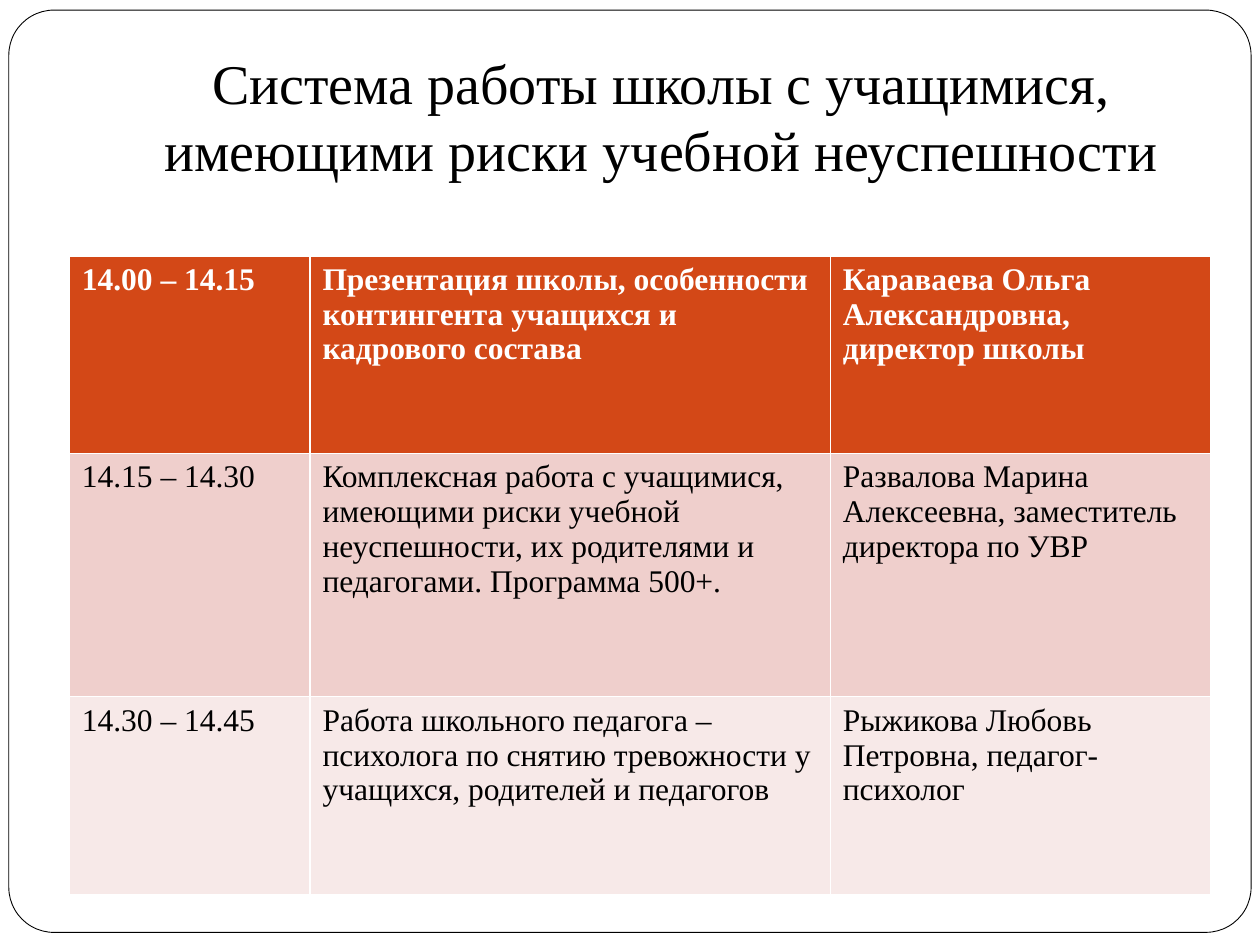
from dataclasses import dataclass

from pptx import Presentation
from pptx.dml.color import RGBColor
from pptx.enum.shapes import MSO_SHAPE
from pptx.enum.text import MSO_ANCHOR, MSO_AUTO_SIZE, PP_ALIGN
from pptx.util import Inches, Pt

ROUNDED = MSO_SHAPE.ROUNDED_RECTANGLE
BOTTOM = MSO_ANCHOR.BOTTOM
CENTER = PP_ALIGN.CENTER
NO_FIT = MSO_AUTO_SIZE.NONE
TITLE_ONLY = 5


@dataclass(frozen=True)
class Theme:
    """Colours, font and type sizes of the deck."""
    font: str = "Times New Roman"
    title_size: int = 32
    table_size: int = 18
    white: RGBColor = RGBColor.from_string("FFFFFF")
    black: RGBColor = RGBColor.from_string("000000")
    header: RGBColor = RGBColor.from_string("D34817")
    bands: tuple = (RGBColor.from_string("EFCFCC"), RGBColor.from_string("F7E9E8"))


THEME = Theme()
TITLE = "Система работы школы с учащимися, имеющими риски учебной неуспешности"
SCHEDULE = [
    ("14.00 – 14.15",
     "Презентация школы, особенности контингента учащихся и кадрового состава",
     "Караваева Ольга Александровна, директор школы"),
    ("14.15 – 14.30",
     "Комплексная работа с учащимися, имеющими риски учебной неуспешности, "
     "их родителями и педагогами. Программа 500+.",
     "Развалова Марина Алексеевна, заместитель директора по УВР"),
    ("14.30 – 14.45",
     "Работа школьного педагога – психолога по снятию тревожности у учащихся, "
     "родителей и педагогов",
     "Рыжикова Любовь Петровна, педагог-психолог"),
]
COLUMN_WIDTHS = (1.91, 4.13, 3.02)
ROW_HEIGHTS = (1.57, 1.93, 1.57)


def style_text(frame, size, color, bold=False):
    """Format every run of a text frame."""
    for para in frame.paragraphs:
        for span in para.runs:
            span.font.name = THEME.font
            span.font.size = Pt(size)
            span.font.bold = bold
            span.font.color.rgb = color


def add_frame(page, box):
    """Draw the rounded page frame behind everything else."""
    frame = page.shapes.add_shape(ROUNDED, *map(Inches, box))
    frame.adjustments[0] = 0.049
    frame.shadow.inherit = False
    frame.fill.solid()
    frame.fill.fore_color.rgb = THEME.white
    frame.line.color.rgb = THEME.black
    frame.line.width = Pt(0.5)
    page.shapes.title.element.addprevious(frame.element)


def place_title(page, box):
    """Move the title placeholder into its box and fill it."""
    title = page.shapes.title
    title.left, title.top, title.width, title.height = map(Inches, box)
    frame = title.text_frame
    frame.text = TITLE
    frame.word_wrap = True
    frame.auto_size = NO_FIT
    frame.vertical_anchor = BOTTOM
    frame.margin_left = frame.margin_right = frame.margin_bottom = Inches(0.1)
    frame.margin_top = Inches(0.05)
    frame.paragraphs[0].alignment = CENTER
    style_text(frame, THEME.title_size, THEME.black)


def add_schedule(page, box):
    """Add the schedule table with a header row and alternating bands."""
    table = page.shapes.add_table(
        len(SCHEDULE), len(COLUMN_WIDTHS), *map(Inches, box)).table
    for column, width in zip(table.columns, COLUMN_WIDTHS):
        column.width = Inches(width)
    for index, (row, texts) in enumerate(zip(table.rows, SCHEDULE)):
        row.height = Inches(ROW_HEIGHTS[index])
        is_header = index == 0
        fill = THEME.header if is_header else THEME.bands[(index - 1) % 2]
        color = THEME.white if is_header else THEME.black
        for cell, text in zip(row.cells, texts):
            cell.text_frame.text = text
            cell.fill.solid()
            cell.fill.fore_color.rgb = fill
            style_text(cell.text_frame, THEME.table_size, color, is_header)


def main():
    """Build and save the deck."""
    deck = Presentation()
    deck.slide_width, deck.slide_height = Inches(10), Inches(7.5)
    page = deck.slides.add_slide(deck.slide_layouts[TITLE_ONLY])
    add_frame(page, (0.07, 0.08, 9.86, 7.32))
    place_title(page, (1, 0.3, 8.5, 1.25))
    add_schedule(page, (0.55, 2.03, sum(COLUMN_WIDTHS), sum(ROW_HEIGHTS)))
    deck.save("out.pptx")


if __name__ == "__main__":
    main()
